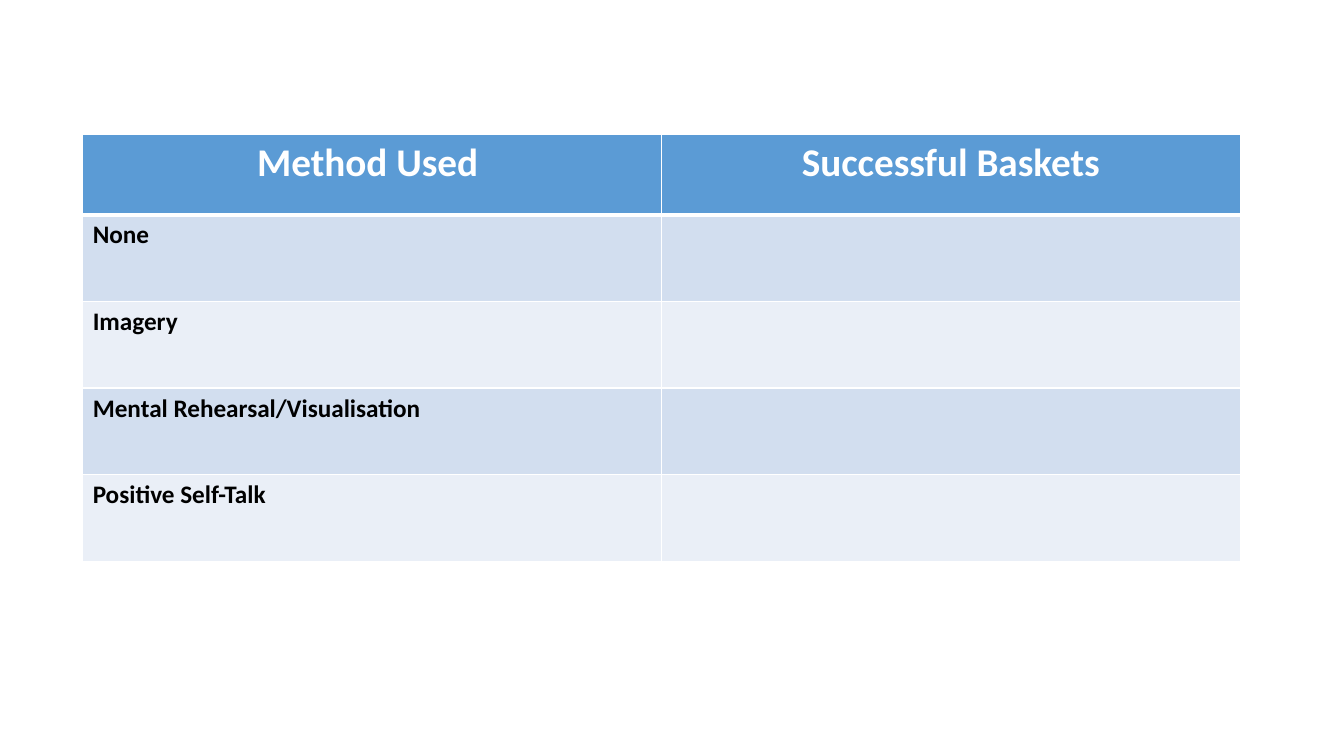
from lxml.etree import SubElement as sub
from pptx import Presentation
from pptx.dml.color import RGBColor as RGB
from pptx.enum.text import PP_ALIGN as Align
from pptx.oxml.ns import qn
from pptx.util import Inches, Pt

HEADS = ["Method Used ", "Successful Baskets"]
METHODS = ["None", "Imagery", "Mental Rehearsal/Visualisation",
           "Positive Self-Talk"]
BLUE, BANDS = "5B9BD5", ["D2DEEF", "EAEFF7"]
WHITE, BLACK = "FFFFFF", "000000"


def paint(fill, color):
    fill.solid()
    fill.fore_color.rgb = RGB.from_string(color)


def edge(cell, side, width):
    props = cell._tc.get_or_add_tcPr()
    line = sub(props, qn("a:ln" + side), w=str(Pt(width)))
    fill = sub(line, qn("a:solidFill"))
    sub(fill, qn("a:srgbClr"), val=WHITE)


def style(cell, fill, top=1, bottom=1):
    # Borders come before the fill in the cell properties
    for side, width in (("L", 1), ("R", 1), ("T", top), ("B", bottom)):
        edge(cell, side, width)
    paint(cell.fill, fill)


def write(cell, text, size, color, align=Align.LEFT):
    cell.text = text
    para = cell.text_frame.paragraphs[0]
    para.alignment = align
    font = para.font
    font.name, font.size, font.bold = "Calibri", Pt(size), True
    font.color.rgb = RGB.from_string(color)


def add_grid(slide):
    frame = slide.shapes.add_table(
        len(METHODS) + 1, len(HEADS),
        Inches(0.82), Inches(1.33), Inches(11.48), Inches(4.24))
    table = frame.table
    for col in table.columns:
        col.width = Inches(5.74)
    for num, row in enumerate(table.rows):
        row.height = Inches(0.86 if num else 0.8)

    # Header row
    for cell, head in zip(table.rows[0].cells, HEADS):
        style(cell, BLUE, bottom=3)
        write(cell, head, 28, WHITE, Align.CENTER)

    # One banded row per method, with the score left blank
    for num, method in enumerate(METHODS):
        cells = table.rows[num + 1].cells
        for cell in cells:
            style(cell, BANDS[num % 2], top=1 if num else 3)
        write(cells[0], method, 18, BLACK)


def main():
    deck = Presentation()
    deck.slide_width, deck.slide_height = Inches(13.33), Inches(7.5)
    slide = deck.slides.add_slide(deck.slide_layouts[6])
    paint(slide.background.fill, WHITE)
    add_grid(slide)
    deck.save("out.pptx")


if __name__ == "__main__":
    main()
